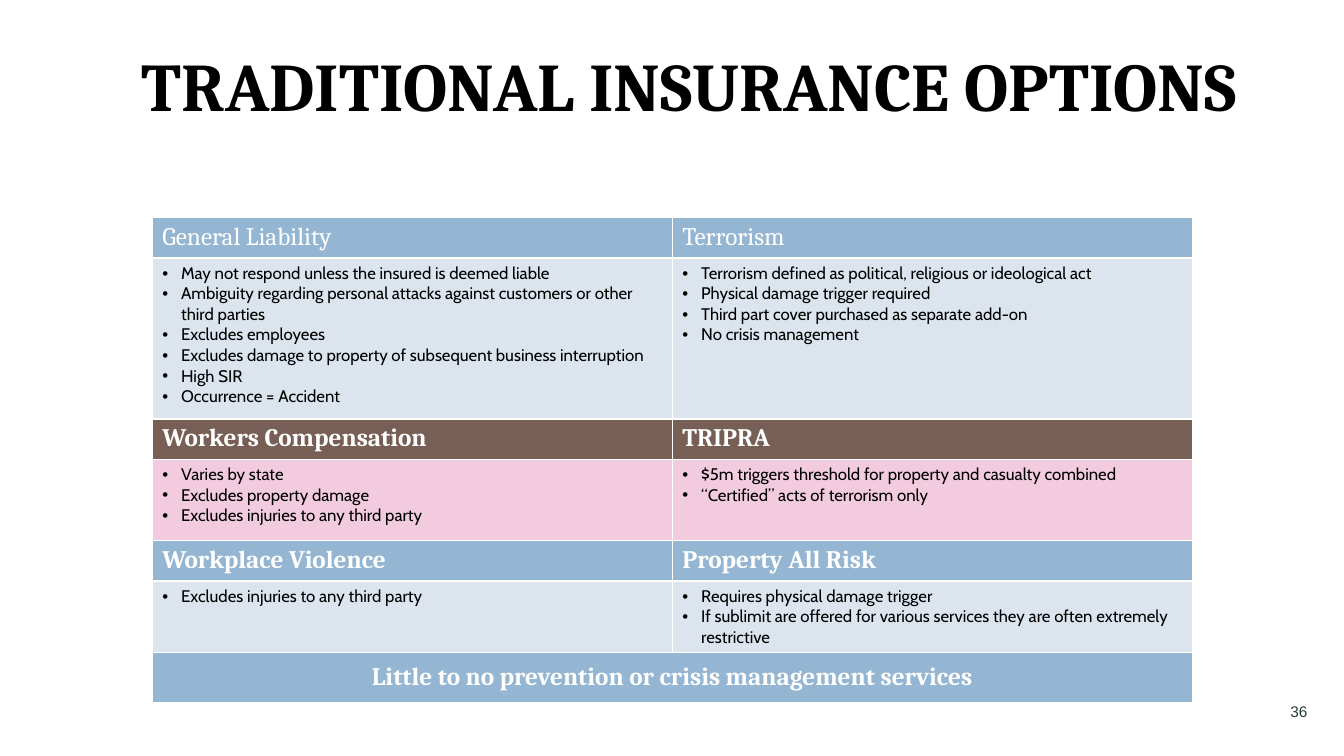
from lxml.etree import SubElement
from pptx import Presentation
from pptx.dml.color import RGBColor
from pptx.enum.text import MSO_ANCHOR as Anchor, PP_ALIGN as Align
from pptx.oxml.ns import qn
from pptx.util import Pt

TITLE = "TRADITIONAL INSURANCE OPTIONS"
PAGE = "36"
FOOTER = "Little to no prevention or crisis management services"

# One entry per band: style, header bold, header height, body height, columns
BANDS = [
    ("blue", False, 28, 115, [
        ("General Liability", [
            "May not respond unless the insured is deemed liable",
            "Ambiguity regarding personal attacks against customers or other third parties",
            "Excludes employees",
            "Excludes damage to property of subsequent business interruption",
            "High SIR",
            "Occurrence = Accident",
        ]),
        ("Terrorism", [
            "Terrorism defined as political, religious or ideological act",
            "Physical damage trigger required",
            "Third part cover purchased as separate add-on",
            "No crisis management",
        ]),
    ]),
    ("brown", True, 28, 58, [
        ("Workers Compensation", [
            "Varies by state",
            "Excludes property damage",
            "Excludes injuries to any third party",
        ]),
        ("TRIPRA", [
            "$5m triggers threshold for property and casualty combined",
            "“Certified” acts of terrorism only",
        ]),
    ]),
    ("blue", True, 28, 51, [
        ("Workplace Violence", ["Excludes injuries to any third party"]),
        ("Property All Risk", [
            "Requires physical damage trigger",
            "If sublimit are offered for various services they are often extremely restrictive",
        ]),
    ]),
]
FOOTER_HEIGHT = 36

THEME = {
    # type styles: font, size, colour
    "title": ("Cambria", 48.6, "000000"),
    "head": ("Cambria", 18, "FFFFFF"),
    "body": ("Cabin", 12, "000000"),
    "page": ("Arial", 11, "283E36"),
    # band fills: header, body
    "blue": ("94B6D2", "DCE5EE"),
    "brown": ("775F55", "F2CCDE"),
    "border": "FFFFFF",
}
TABLE_LEFT, TABLE_TOP, COL_WIDTH = 108.7, 155.5, 371.5
BULLET_INDENT = 13.5


def add_run(p, text, style, bold=False):
    font, size, color = THEME[style]
    r = p.add_run()
    r.text = text
    r.font.name, r.font.size, r.font.bold = font, Pt(size), bold
    r.font.color.rgb = RGBColor.from_string(color)


def add_text(s, box, text, style, align, bold=False):
    tf = s.shapes.add_textbox(*map(Pt, box)).text_frame
    tf.word_wrap = True
    tf.vertical_anchor = Anchor.MIDDLE
    p = tf.paragraphs[0]
    p.alignment = align
    add_run(p, text, style, bold)
    return p


def add_bullet(p):
    pPr = p._p.get_or_add_pPr()
    pPr.set("marL", str(Pt(BULLET_INDENT)))
    pPr.set("indent", str(-Pt(BULLET_INDENT)))
    SubElement(pPr, qn("a:buFont")).set("typeface", "Arial")
    SubElement(pPr, qn("a:buChar")).set("char", "•")


def paint_cell(cell, color):
    """Fill a cell and draw its four borders, which must precede the fill."""
    cell.fill.solid()
    cell.fill.fore_color.rgb = RGBColor.from_string(color)
    tcPr = cell._tc.get_or_add_tcPr()
    for i, side in enumerate(("lnL", "lnR", "lnT", "lnB")):
        ln = SubElement(tcPr, qn("a:" + side), w=str(Pt(1)))
        fill = SubElement(ln, qn("a:solidFill"))
        SubElement(fill, qn("a:srgbClr"), val=THEME["border"])
        tcPr.insert(i, ln)


def fill_header(cell, text, color, bold):
    paint_cell(cell, color)
    add_run(cell.text_frame.paragraphs[0], text, "head", bold)


def fill_body(cell, items, color):
    paint_cell(cell, color)
    tf = cell.text_frame
    for i, item in enumerate(items):
        p = tf.add_paragraph() if i else tf.paragraphs[0]
        add_bullet(p)
        add_run(p, item, "body")


def add_options_table(s):
    heights = [h for band in BANDS for h in band[2:4]] + [FOOTER_HEIGHT]
    frame = s.shapes.add_table(len(heights), 2, Pt(TABLE_LEFT), Pt(TABLE_TOP),
                               Pt(2 * COL_WIDTH), Pt(sum(heights)))
    table = frame.table
    table.first_row = table.horz_banding = False
    for col in table.columns:
        col.width = Pt(COL_WIDTH)
    for row, height in zip(table.rows, heights):
        row.height = Pt(height)

    for i, (style, bold, _, _, columns) in enumerate(BANDS):
        head_fill, body_fill = THEME[style]
        for c, (heading, items) in enumerate(columns):
            fill_header(table.cell(2 * i, c), heading, head_fill, bold)
            fill_body(table.cell(2 * i + 1, c), items, body_fill)

    last = len(heights) - 1
    footer = table.cell(last, 0)
    footer.merge(table.cell(last, 1))
    fill_header(footer, FOOTER, THEME["blue"][0], True)
    footer.vertical_anchor = Anchor.MIDDLE
    footer.text_frame.paragraphs[0].alignment = Align.CENTER


def main():
    prs = Presentation()
    prs.slide_width, prs.slide_height = Pt(960), Pt(540)
    s = prs.slides.add_slide(prs.slide_layouts[6])
    title = add_text(s, (44.6, 26.6, 895, 75), TITLE, "title", Align.CENTER, True)
    title.line_spacing = 0.9
    add_text(s, (890.6, 494, 50.4, 28.8), PAGE, "page", Align.RIGHT)
    add_options_table(s)
    prs.save("out.pptx")


if __name__ == "__main__":
    main()
